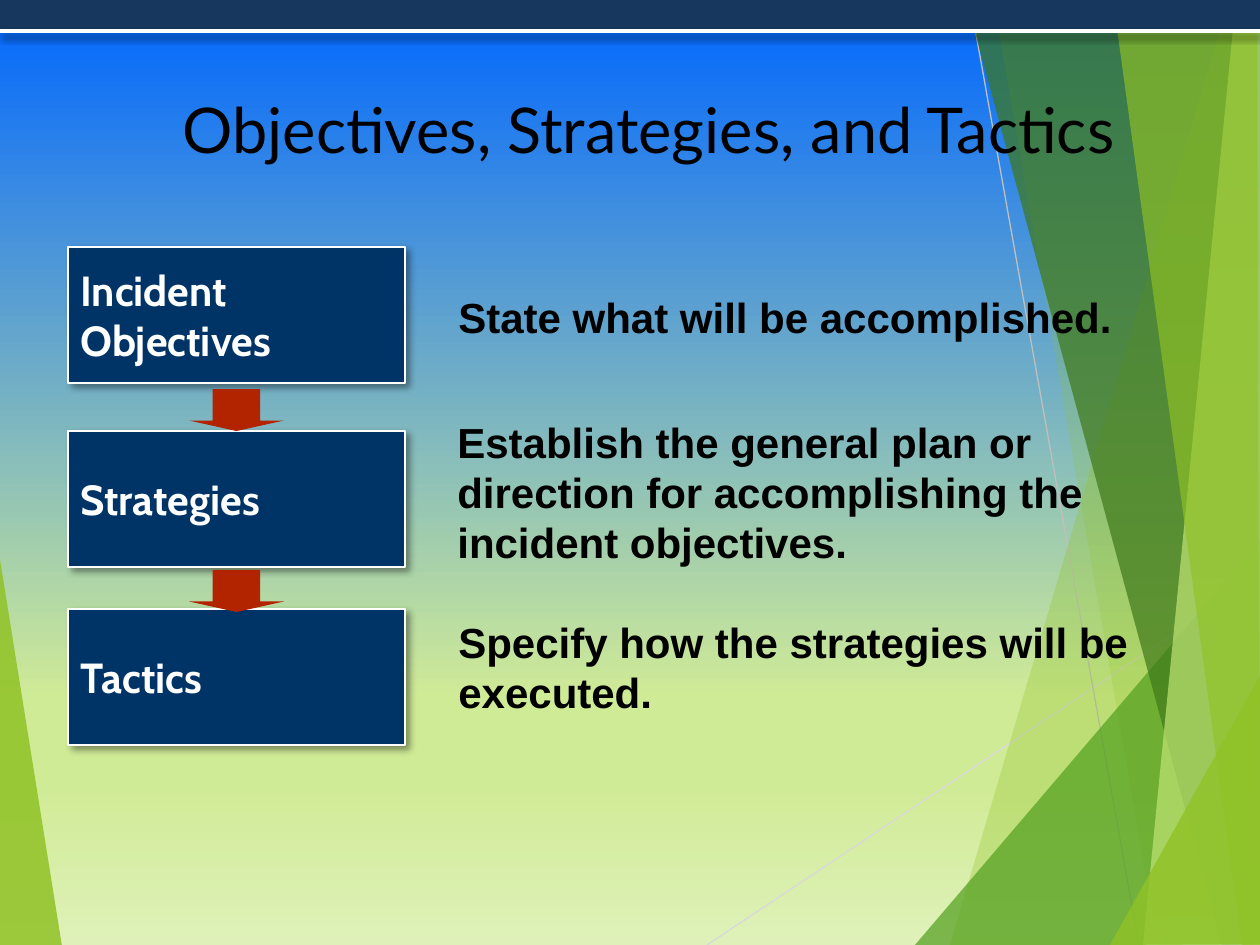
from lxml import etree
from pptx import Presentation
from pptx.dml.color import RGBColor
from pptx.enum import shapes, text
from pptx.oxml import ns
from pptx.util import Emu, Pt

PX = 914400 / 126
NAVY = RGBColor(0x00, 0x33, 0x66)
HEADER = RGBColor(0x17, 0x37, 0x5E)
RED = RGBColor(0xB2, 0x24, 0x00)
BLACK = RGBColor(0x00, 0x00, 0x00)
WHITE = RGBColor(0xFF, 0xFF, 0xFF)
SILVER = RGBColor(0xC0, 0xC0, 0xC0)
GREY = RGBColor(0xBF, 0xBF, 0xBF)
LIGHT_GREY = RGBColor(0xD9, 0xD9, 0xD9)
LIME = RGBColor(0x90, 0xC2, 0x26)
GREEN = RGBColor(0x54, 0xA0, 0x21)
FOREST = RGBColor(0x3F, 0x78, 0x19)
PALE_LIME = RGBColor(0xC0, 0xE4, 0x74)
SKY_STOPS = [(0, "0066FF"), (74, "D0EB96"), (83, "D0EB96"), (100, "DFF1B9")]

FACETS_LEFT = [([(-1, 553), (62, 946), (-1, 945)], LIME, 85)]
FACETS_RIGHT = [
    ([(1229, 0), (950, 945), (1262, 946), (1261, 1)], LIME, 30),
    ([(993, -1), (1158, 945), (1261, 945), (1261, -1)], LIME, 20),
    ([(915, 945), (1260, 541), (1261, 945)], GREEN, 72),
    ([(966, -1), (1222, 945), (1261, 944), (1261, -1)], FOREST, 70),
    ([(1236, -1), (1143, 945), (1261, 945), (1260, -1)], PALE_LIME, 70),
    ([(1113, -1), (1242, 945), (1260, 945), (1257, -1)], LIME, 65),
    ([(1110, 945), (1261, 674), (1261, 944)], LIME, 80),
]
STEPS = [
    ("Incident\nObjectives", 247, "State what will be accomplished.", (446, 285, 766, 60)),
    ("Strategies", 431, "Establish the general plan or direction for accomplishing "
     "the incident objectives.", (445, 410, 766, 179)),
    ("Tactics", 609, "Specify how the strategies will be executed.", (446, 610, 766, 126)),
]
ARROW_TOPS = (389, 570)


def px(*lengths):
    return [Emu(round(length * PX)) for length in lengths]


def element(parent, tag, **attributes):
    return etree.SubElement(parent, ns.qn(tag), attributes)


def effects(parent, color=None, alpha=100, blur=0, distance=0, angle=0):
    effect_list = element(parent, "a:effectLst")
    if color is not None:
        shadow = element(effect_list, "a:outerShdw", blurRad=str(Pt(blur)), dist=str(Pt(distance)),
                         dir=str(angle * 60000), algn="tl", rotWithShape="0")
        element(element(shadow, "a:srgbClr", val=str(color)), "a:alpha", val=str(alpha * 1000))
    return effect_list


def write(frame, content, font, size, color, bold=False, align=text.PP_ALIGN.LEFT,
          anchor=text.MSO_ANCHOR.TOP, wrap=True):
    frame.word_wrap = wrap
    frame.vertical_anchor = anchor
    paragraph = frame.paragraphs[0]
    paragraph.text = content
    paragraph.alignment = align
    for run in paragraph.runs:
        run.font.name, run.font.size, run.font.bold = font, Pt(size), bold
        run.font.color.rgb = color
    return paragraph


class SlideBuilder:
    """Draws styled elements on the current slide."""

    def __init__(self, presentation):
        self.slide = presentation.slides.add_slide(presentation.slide_layouts[5])
        self.shapes = self.slide.shapes

    def background(self, stops):
        fill = self.slide.background.fill
        fill.gradient()
        fill.gradient_angle = 270
        stop_list = self.slide.element.find(".//" + ns.qn("a:gsLst"))
        for old_stop in list(stop_list):
            stop_list.remove(old_stop)
        for position, color in stops:
            stop = element(stop_list, "a:gs", pos=str(position * 1000))
            element(stop, "a:srgbClr", val=color)

    def paint(self, shape, color, line=None):
        shape.fill.solid()
        shape.fill.fore_color.rgb = color
        if line is None:
            shape.line.fill.background()
        else:
            shape.line.color.rgb = line
            shape.line.width = Pt(0.75)

    def facet(self, points, color, opacity):
        builder = self.shapes.build_freeform(*points[0], scale=PX)
        builder.add_line_segments(points[1:], close=True)
        shape = builder.convert_to_shape()
        self.paint(shape, color)
        effects(shape._element.spPr)
        solid = shape._element.spPr.find(ns.qn("a:solidFill"))
        element(solid[0], "a:alpha", val=str(opacity * 1000))

    def line(self, ends, color, width, shadow=()):
        connector = self.shapes.add_connector(shapes.MSO_CONNECTOR.STRAIGHT, *px(*ends))
        connector.line.color.rgb = color
        connector.line.width = Pt(width)
        effects(connector._element.spPr, *shadow)

    def preset(self, kind, bounds, color, line=None, shadow=()):
        shape = self.shapes.add_shape(kind, *px(*bounds))
        self.paint(shape, color, line)
        effects(shape._element.spPr, *shadow)
        return shape

    def box(self, label, top):
        shape = self.preset(shapes.MSO_SHAPE.RECTANGLE, (68, top, 337, 136), NAVY, WHITE,
                            shadow=(BLACK, 40, 4, 3, 45))
        write(shape.text_frame, label, "Cabin", 24, WHITE, bold=True,
              anchor=text.MSO_ANCHOR.MIDDLE, wrap=False)

    def arrow(self, top):
        shape = self.preset(shapes.MSO_SHAPE.DOWN_ARROW, (189, top, 95, 42), RED)
        shape.adjustments[0], shape.adjustments[1] = 0.5, 0.25

    def note(self, content, bounds):
        frame = self.shapes.add_textbox(*px(*bounds)).text_frame
        write(frame, content, "Arial", 24, BLACK, bold=True)

    def title(self, content, bounds):
        title = self.shapes.title
        title.left, title.top, title.width, title.height = px(*bounds)
        paragraph = write(title.text_frame, content, "Lato", 36, BLACK, align=text.PP_ALIGN.CENTER)
        properties = paragraph.runs[0]._r.get_or_add_rPr()
        shadow = effects(properties, SILVER, distance=2, angle=45)
        properties.find(ns.qn("a:solidFill")).addnext(shadow)
        title._element.getparent().append(title._element)


def main():
    presentation = Presentation()
    presentation.slide_width, presentation.slide_height = px(1260, 945)
    builder = SlideBuilder(presentation)
    builder.background(SKY_STOPS)
    for facet in FACETS_LEFT:
        builder.facet(*facet)
    builder.line((707, 945, 1261, 576), LIGHT_GREY, 0.75)
    builder.line((970, 0, 1139, 945), GREY, 0.75)
    for facet in FACETS_RIGHT:
        builder.facet(*facet)
    builder.preset(shapes.MSO_SHAPE.RECTANGLE, (0, 0, 1260, 31), HEADER)
    builder.line((1260, 31, 0, 31), WHITE, 2, shadow=(BLACK, 40, 4, 3, 90))
    builder.title("Objectives, Strategies, and Tactics", (84, 84, 1129, 181))
    for label, top, content, bounds in STEPS:
        builder.box(label, top)
        builder.note(content, bounds)
    for top in ARROW_TOPS:
        builder.arrow(top)
    presentation.save("out.pptx")


if __name__ == "__main__":
    main()
